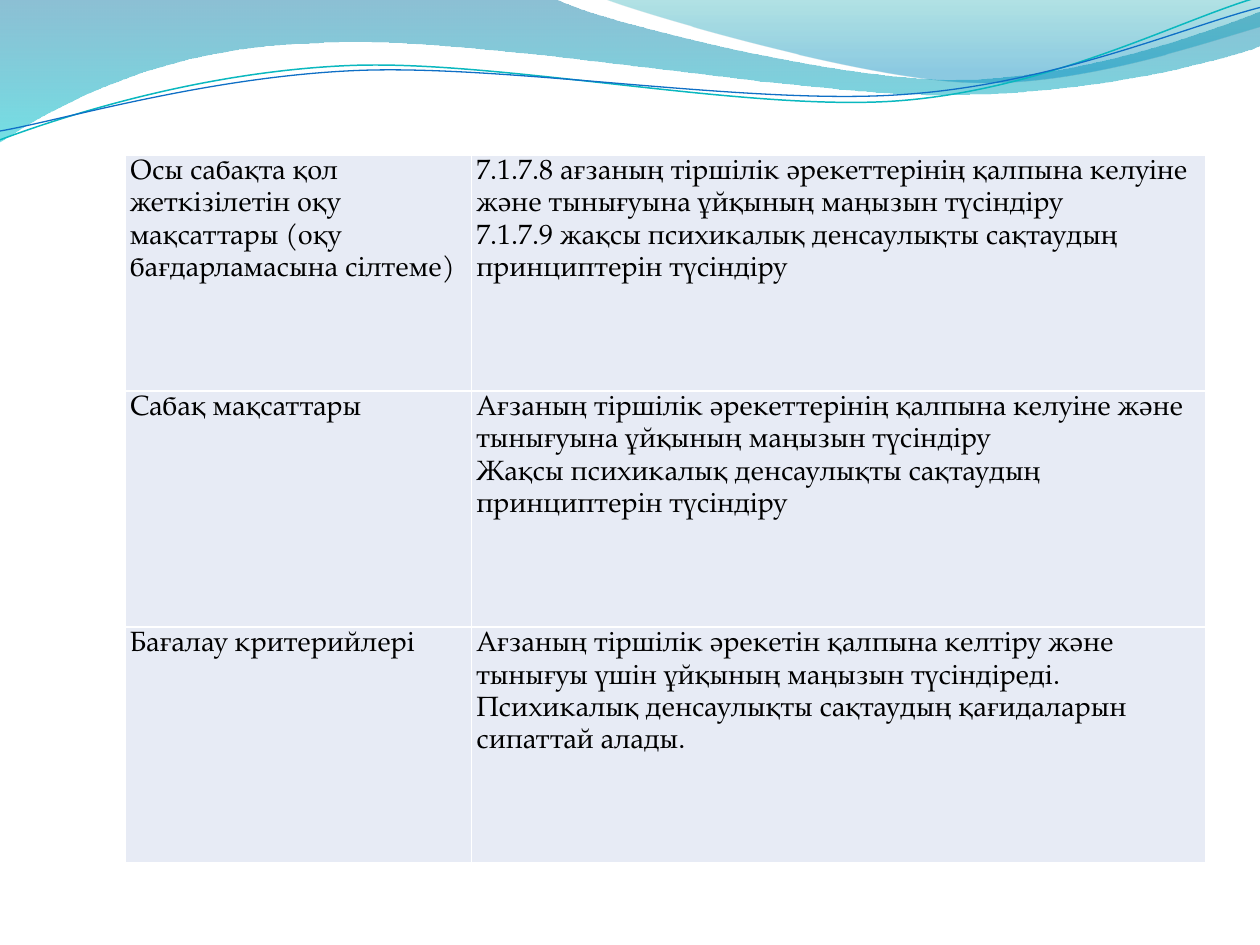
import dataclasses
import math

import lxml.etree
import pptx
import pptx.dml.color
import pptx.enum.text
import pptx.oxml.ns
import pptx.util

Inches, Pt = pptx.util.Inches, pptx.util.Pt
qn = pptx.oxml.ns.qn


def tint(code):
    return pptx.dml.color.RGBColor.from_string(code)


@dataclasses.dataclass
class Theme:
    font: str = "TeX Gyre Pagella"
    size: float = 16
    ink: str = "000000"
    cell: str = "E7EBF5"
    rule: str = "FFFFFF"
    teal: str = "0AB8BF"
    blue: str = "0F6FC6"
    # Gradient stops: place, colour, opacity in percent
    left: tuple = ((0, "0074A1", 45), (1, "00C6CF", 55))
    right: tuple = ((0, "00A1A9", 30), (0.8, "008BBF", 45))


def turn(dot, mid, angle):
    """The dot turned clockwise about mid."""
    dx, dy = dot[0] - mid[0], dot[1] - mid[1]
    cos, sin = math.cos(math.radians(angle)), math.sin(math.radians(angle))
    return mid[0] + dx * cos - dy * sin, mid[1] + dx * sin + dy * cos


class Page:
    def __init__(self, slide, theme):
        self.slide, self.theme = slide, theme

    def trace(self, parts, close, mid=(0, 0), angle=0):
        """Outline of parts: one pair is a straight step, three are a Bezier."""
        dots = [part[i:i + 2] for part in parts for i in range(0, len(part), 2)]
        dots = [turn(dot, mid, -angle) for dot in dots]
        dots = [(Inches(x), Inches(y)) for x, y in dots]
        build = self.slide.shapes.build_freeform(*dots[0], scale=1.0)
        build.add_line_segments(dots[1:], close=close)
        shape = build.convert_to_shape()
        shape.shadow.inherit = False
        shape.rotation = angle
        # Join each three steps of a Bezier part into one curve
        steps = iter(list(shape._element.iter(qn("a:lnTo"))))
        for part in parts[1:]:
            group = [next(steps) for _ in range(len(part) // 2)]
            if len(group) == 3:
                bend = lxml.etree.Element(qn("a:cubicBezTo"))
                group[0].addprevious(bend)
                for step in group:
                    bend.append(step[0])
                    step.getparent().remove(step)
        return shape

    def wave(self, parts, stops):
        shape = self.trace(parts, True)
        shape.line.fill.background()
        shape.fill.gradient()
        shape.fill.gradient_angle = 270
        for stop, (place, code, _) in zip(shape.fill.gradient_stops, stops):
            stop.position = place
            stop.color.rgb = tint(code)
        nodes = shape._element.spPr.iter(qn("a:srgbClr"))
        for node, (_, _, alpha) in zip(nodes, stops):
            lxml.etree.SubElement(node, qn("a:alpha"), val=str(alpha * 1000))

    def line(self, parts, mid, code, width):
        shape = self.trace(parts, False, mid, -2.7)
        shape.fill.background()
        shape.line.color.rgb = tint(code)
        shape.line.width = Pt(width)

    def edge(self, cell):
        props = cell._tc.get_or_add_tcPr()
        for side in "LRTB":
            rule = lxml.etree.SubElement(props, qn("a:ln" + side), w=str(Pt(1)))
            fill = lxml.etree.SubElement(rule, qn("a:solidFill"))
            lxml.etree.SubElement(fill, qn("a:srgbClr"), val=self.theme.rule)

    def fill(self, cell, lines):
        look = self.theme
        form = {"margin_left": Inches(0.04), "margin_right": Inches(0.04),
                "margin_top": 0, "margin_bottom": 0,
                "vertical_anchor": pptx.enum.text.MSO_ANCHOR.TOP}
        for name, value in form.items():
            setattr(cell, name, value)
        self.edge(cell)
        cell.fill.solid()
        cell.fill.fore_color.rgb = tint(look.cell)
        cell.text = "\n".join(lines)
        type_form = {"name": look.font, "size": Pt(look.size), "bold": False}
        for para in cell.text_frame.paragraphs:
            para.line_spacing = 1.15
            for run in para.runs:
                for name, value in type_form.items():
                    setattr(run.font, name, value)
                run.font.color.rgb = tint(look.ink)

    def table(self, rows, left, top, widths, height):
        frame = self.slide.shapes.add_table(
            len(rows), len(widths), Inches(left), Inches(top),
            Inches(sum(widths)), Inches(height))
        grid = frame.table
        grid.first_row = grid.horz_banding = False
        for col, width in zip(grid.columns, widths):
            col.width = Inches(width)
        for r, row in enumerate(rows):
            grid.rows[r].height = Inches(height / len(rows))
            for c, lines in enumerate(row):
                self.fill(grid.cell(r, c), lines)


ROWS = [
    (["Осы сабақта қол жеткізілетін оқу мақсаттары (оқу бағдарламасына сілтеме)"],
     ["7.1.7.8 ағзаның тіршілік әрекеттерінің қалпына келуіне және тынығуына "
      "ұйқының маңызын түсіндіру",
      "7.1.7.9 жақсы психикалық денсаулықты сақтаудың принциптерін түсіндіру"]),
    (["Сабақ мақсаттары"],
     ["Ағзаның тіршілік әрекеттерінің қалпына келуіне және тынығуына "
      "ұйқының маңызын түсіндіру",
      "Жақсы психикалық денсаулықты сақтаудың принциптерін түсіндіру"]),
    (["Бағалау критерийлері"],
     ["Ағзаның тіршілік әрекетін қалпына келтіру және тынығуы үшін "
      "ұйқының маңызын түсіндіреді.",
      "Психикалық денсаулықты сақтаудың қағидаларын сипаттай алады."]),
]


def main():
    deck = pptx.Presentation()
    deck.slide_width, deck.slide_height = Inches(10), Inches(7.5)
    look = Theme()
    page = Page(deck.slides.add_slide(deck.slide_layouts[6]), look)

    # Waves along the top
    page.wave([(0, 0), (4.4, -0.01),
               (4.76, 0.17, 6.64, 0.63, 7.58, 0.63),
               (8.53, 0.63, 9.58, 0.26, 10, 0.09), (10.01, 0.36),
               (9.83, 0.44, 8.7, 0.76, 7.46, 0.75),
               (6.22, 0.75, 3.82, 0.28, 2.57, 0.34),
               (1.29, 0.36, 0.46, 0.83, -0.01, 1.13)], look.left)
    page.wave([(4.79, -0.01), (5.09, 0.11, 6.82, 0.62, 7.69, 0.65),
               (8.56, 0.69, 9.61, 0.32, 10, 0.21), (10, 0)], look.right)

    # Thin lines over the waves
    page.line([(0, 1.11), (0.48, 0.93, 1.58, 0.57, 2.77, 0.52),
               (3.95, 0.47, 5.93, 0.89, 7.13, 0.8),
               (8.33, 0.71, 9.38, 0.15, 9.98, -0.02)],
              (4.99, 0.58), look.teal, 0.85)
    page.line([(0, 1.04), (0.47, 0.96, 1.64, 0.61, 2.83, 0.56),
               (4.03, 0.51, 5.97, 0.84, 7.17, 0.75),
               (8.36, 0.67, 9.41, 0.21, 10, 0.06)],
              (5, 0.59), look.blue, 0.75)

    # Lesson goals
    page.table(ROWS, 0.99, 1.23, (2.75, 5.83), 5.62)
    deck.save("out.pptx")


if __name__ == "__main__":
    main()
